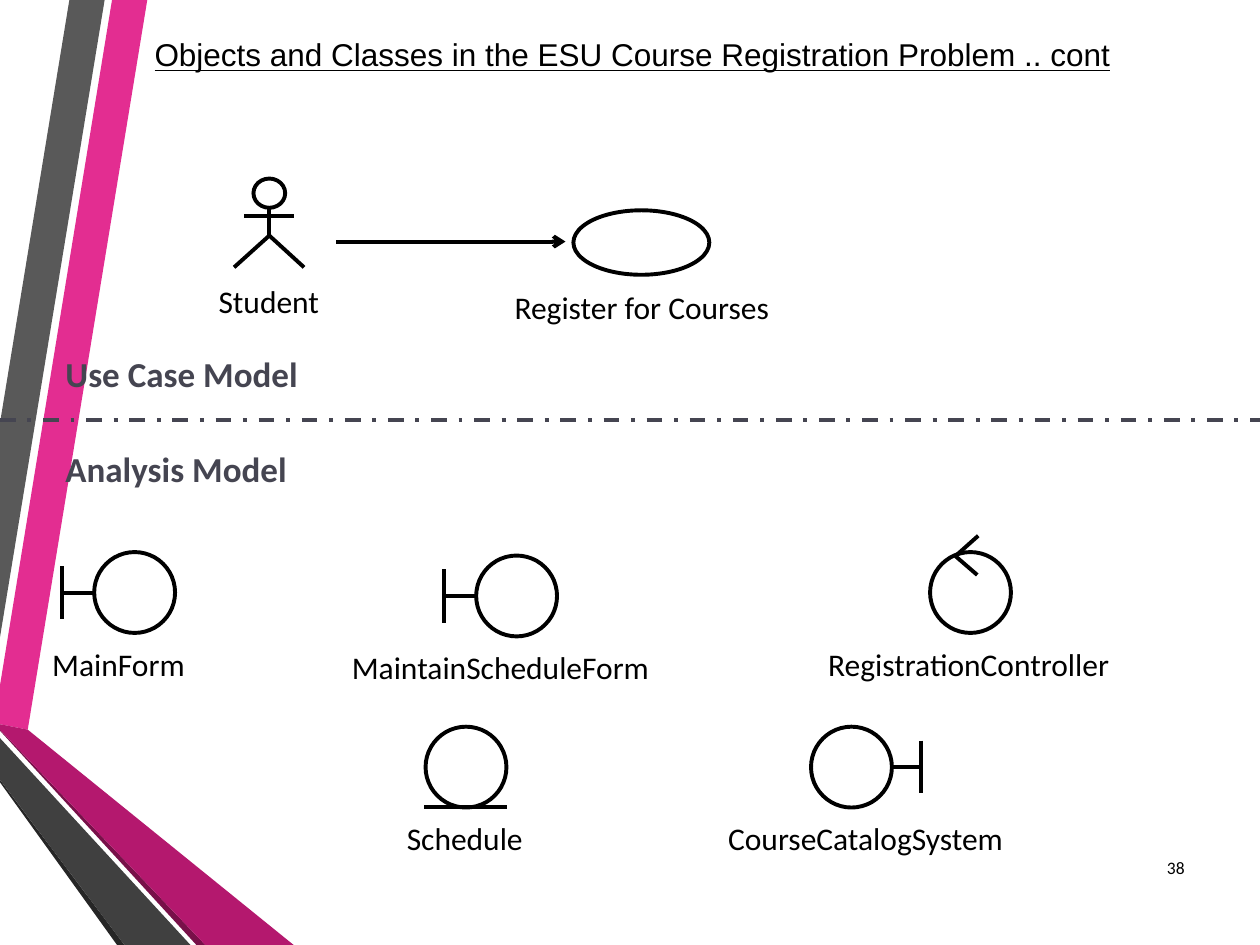
"""Build the course registration slide with its use case and analysis models."""
from dataclasses import dataclass

from lxml import etree
from pptx import Presentation
from pptx.dml.color import RGBColor
from pptx.enum.dml import MSO_LINE
from pptx.enum.shapes import MSO_CONNECTOR, MSO_SHAPE
from pptx.enum.text import MSO_ANCHOR, MSO_AUTO_SIZE, PP_ALIGN
from pptx.oxml.ns import qn
from pptx.util import Cm, Pt

STRAIGHT = MSO_CONNECTOR.STRAIGHT
OVAL = MSO_SHAPE.OVAL
DASH_DOT = MSO_LINE.DASH_DOT
MIDDLE, TOP = MSO_ANCHOR.MIDDLE, MSO_ANCHOR.TOP
NO_FIT = MSO_AUTO_SIZE.NONE
LEFT, CENTER, RIGHT = PP_ALIGN.LEFT, PP_ALIGN.CENTER, PP_ALIGN.RIGHT

BLACK, SLATE = "000000", "454551"
WIDTH, HEIGHT = 25.4, 19.05
DIAMETER = 1.63
LABEL_DROP = 1.87
LABEL_HEIGHT = 0.76


@dataclass(frozen=True)
class Band:
    """A filled polygon of the side decoration, in centimetres."""
    color: str
    points: tuple


@dataclass(frozen=True)
class Stereotype:
    """An analysis class: circle corner, label centre and width, and kind."""
    name: str
    x: float
    y: float
    label_x: float
    label_w: float
    kind: str


@dataclass(frozen=True)
class Label:
    """A text box with default insets."""
    text: str
    box: tuple
    align: PP_ALIGN
    font: dict
    anchor: MSO_ANCHOR = TOP


BODY = {"name": "Calibri", "size": Pt(18)}
HEADING = {"name": "Calibri", "size": Pt(20), "bold": True}
NUMBER = {"name": "Calibri", "size": Pt(10)}
TITLE = {"name": "Arial", "size": Pt(18), "underline": True}

BANDS = (
    Band("E32D91", ((0, 13.82), (0, 14.6), (0.56, 14.71), (2.97, 0), (2.26, 0))),
    Band("595959", ((2.11, 0), (1.4, 0), (0, 8.53), (0, 12.85))),
    Band("262626", ((0, 15.72), (0, 15.77), (2.36, HEIGHT), (2.51, HEIGHT))),
    Band("781049", ((0, 14.71), (0, 14.73), (3.96, HEIGHT), (4.14, HEIGHT))),
    Band("B4186E", ((0, 14.71), (4.14, HEIGHT), (5.92, HEIGHT), (0.56, 14.71), (0, 14.6))),
    Band("404040", ((0, 15.72), (2.51, HEIGHT), (3.84, HEIGHT), (0, 14.88))),
)

MARKS = {
    "left boundary": ((-0.64, 0.28, -0.64, 1.35), (0, DIAMETER / 2, -0.64, DIAMETER / 2)),
    "right boundary": ((2.21, 0.28, 2.21, 1.33), (2.21, DIAMETER / 2, DIAMETER, DIAMETER / 2)),
    "control": ((0.51, 0.08, 0.97, -0.33), (0.95, 0.46, 0.51, 0.08)),
    "entity": ((-0.03, 1.61, 1.65, 1.61),),
}

STEREOTYPES = (
    Stereotype("MainForm", 1.9, 11.13, 2.39, 2.84, "left boundary"),
    Stereotype("MaintainScheduleForm", 9.6, 11.2, 10.09, 6.53, "left boundary"),
    Stereotype("RegistrationController", 18.75, 11.13, 19.53, 6.15, "control"),
    Stereotype("Schedule", 8.58, 14.65, 9.37, 2.64, "entity"),
    Stereotype("CourseCatalogSystem", 16.35, 14.65, 17.45, 6.35, "right boundary"),
)

LABELS = (
    Label("Student", (4.01, 5.56, 2.82, 1.02), CENTER, BODY),
    Label("Register for Courses", (9.32, 5.69, 7.24, 1.02), CENTER, BODY),
    Label("Use Case Model", (1.07, 6.98, 6.98, 1.09), LEFT, HEADING | {"color": SLATE}),
    Label("Analysis Model", (1.07, 8.89, 6.98, 1.09), LEFT, HEADING | {"color": SLATE}),
    Label("38", (22.94, 16.97, 1.19, 1.02), RIGHT, NUMBER, MIDDLE),
)


def rgb(color: str) -> RGBColor:
    """Turn a hex string into a colour."""
    return RGBColor.from_string(color)


def write(tf, text: str, align: PP_ALIGN, font: dict) -> None:
    """Write one formatted run into a text frame."""
    p = tf.paragraphs[0]
    p.alignment = align
    r = p.add_run()
    r.text = text
    fmt = dict(font)
    r.font.color.rgb = rgb(fmt.pop("color", BLACK))
    for key, value in fmt.items():
        setattr(r.font, key, value)


def add_text(s, label: Label, inset: bool = True) -> None:
    """Add a text box, with its default insets or none."""
    tf = s.shapes.add_textbox(*map(Cm, label.box)).text_frame
    tf.word_wrap = inset
    tf.vertical_anchor = label.anchor
    if not inset:
        for side in ("left", "top", "right", "bottom"):
            setattr(tf, f"margin_{side}", 0)
    write(tf, label.text, label.align, label.font)


def add_line(s, x1: float, y1: float, x2: float, y2: float, color: str = BLACK):
    """Add a straight line without shadow."""
    cxn = s.shapes.add_connector(STRAIGHT, Cm(x1), Cm(y1), Cm(x2), Cm(y2))
    cxn.line.color.rgb = rgb(color)
    cxn.line.width = Pt(2.25)
    etree.SubElement(cxn._element.spPr, qn("a:effectLst"))
    return cxn


def add_oval(s, x: float, y: float, w: float, h: float) -> None:
    """Add an outlined ellipse."""
    sp = s.shapes.add_shape(OVAL, Cm(x), Cm(y), Cm(w), Cm(h))
    sp.shadow.inherit = False
    sp.fill.background()
    sp.line.color.rgb = rgb(BLACK)
    sp.line.width = Pt(2.25)


def add_outline(s, points: tuple, close: bool):
    """Add a freeform through the given points."""
    start, *rest = [(Cm(x), Cm(y)) for x, y in points]
    builder = s.shapes.build_freeform(*start)
    builder.add_line_segments(rest, close=close)
    sp = builder.convert_to_shape()
    sp.shadow.inherit = False
    return sp


def add_band(s, band: Band) -> None:
    """Draw one decoration band."""
    sp = add_outline(s, band.points, True)
    sp.fill.solid()
    sp.fill.fore_color.rgb = rgb(band.color)
    sp.line.fill.background()


def add_actor(s) -> None:
    """Draw the student stick figure."""
    add_oval(s, 5.11, 3.6, 0.64, 0.59)
    add_line(s, 5.43, 4.19, 5.43, 4.75)
    add_line(s, 4.92, 4.35, 5.93, 4.35)
    legs = add_outline(s, ((4.72, 5.39), (5.43, 4.75), (6.13, 5.39)), False)
    legs.fill.background()
    legs.line.color.rgb = rgb(BLACK)
    legs.line.width = Pt(2.25)


def add_stereotype(s, item: Stereotype) -> None:
    """Draw one analysis class with its marks and label."""
    for x1, y1, x2, y2 in MARKS[item.kind]:
        add_line(s, item.x + x1, item.y + y1, item.x + x2, item.y + y2)
    add_oval(s, item.x, item.y, DIAMETER, DIAMETER)
    box = (item.label_x - item.label_w / 2, item.y + LABEL_DROP, item.label_w, LABEL_HEIGHT)
    add_text(s, Label(item.name, box, CENTER, BODY), inset=False)


def main() -> None:
    """Build and save the slide."""
    prs = Presentation()
    prs.slide_width, prs.slide_height = Cm(WIDTH), Cm(HEIGHT)
    s = prs.slides.add_slide(prs.slide_layouts[5])
    for band in BANDS:
        add_band(s, band)

    title = s.shapes.title
    title.left, title.top, title.width, title.height = map(Cm, (0.25, 0.36, 25, 1.47))
    title.text_frame.auto_size = NO_FIT
    title.text_frame.vertical_anchor = MIDDLE
    write(title.text_frame, "Objects and Classes in the ESU Course Registration Problem .. cont",
          CENTER, TITLE)

    add_actor(s)
    arrow = add_line(s, 6.78, 4.87, 11.4, 4.87)
    etree.SubElement(arrow.line._get_or_add_ln(), qn("a:tailEnd"), type="arrow")
    add_oval(s, 11.56, 4.24, 2.74, 1.3)
    add_line(s, 0, 8.46, WIDTH, 8.46, SLATE).line.dash_style = DASH_DOT
    for item in STEREOTYPES:
        add_stereotype(s, item)
    for label in LABELS:
        add_text(s, label)
    prs.save("out.pptx")


if __name__ == "__main__":
    main()
